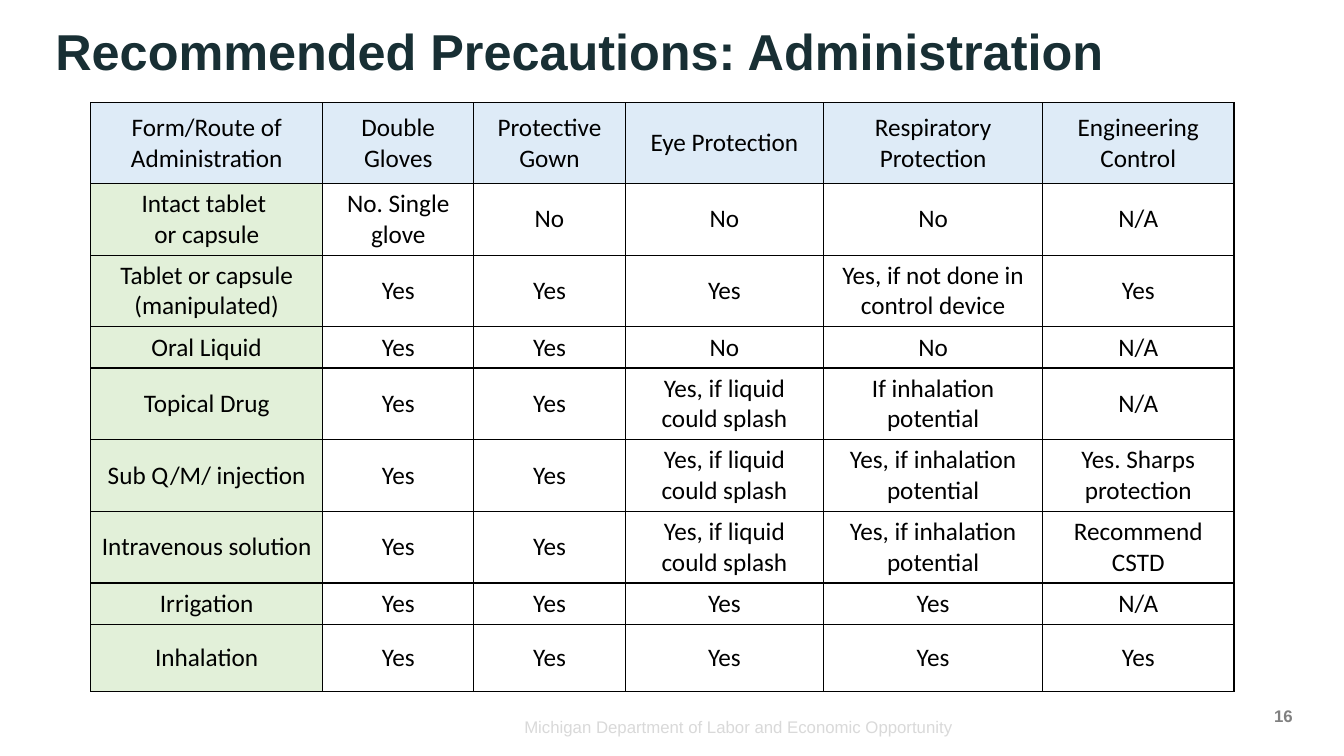
from lxml.etree import SubElement
from pptx import Presentation
from pptx.dml.color import RGBColor
from pptx.enum.text import MSO_ANCHOR, PP_ALIGN
from pptx.oxml.ns import qn
from pptx.util import Inches, Pt

BLACK = RGBColor(0x00, 0x00, 0x00)
TEAL = RGBColor(0x18, 0x2F, 0x34)
BLUE = RGBColor(0xDE, 0xEB, 0xF7)
GREEN = RGBColor(0xE2, 0xF0, 0xD9)
SILVER = RGBColor(0xD9, 0xD9, 0xD9)
GRAY = RGBColor(0x80, 0x80, 0x80)

UNIT = Inches(0.1)  # side of one grid square
WIDTHS = [23, 15, 15, 19.7, 21.7, 19]
HEIGHTS = [8, 7, 7, 4.1, 7, 7, 7, 4.1, 6.7]

SPLASH = "Yes, if liquid could splash"
INHALE = "Yes, if inhalation potential"
ROWS = [
    ["Form/Route of Administration", "Double Gloves", "Protective Gown",
     "Eye Protection", "Respiratory Protection", "Engineering Control"],
    ["Intact tablet \vor capsule", "No. Single glove", "No", "No", "No", "N/A"],
    ["Tablet or capsule (manipulated)", "Yes", "Yes", "Yes",
     "Yes, if not done in control device", "Yes"],
    ["Oral Liquid", "Yes", "Yes", "No", "No", "N/A"],
    ["Topical Drug", "Yes", "Yes", SPLASH, "If inhalation potential", "N/A"],
    ["Sub Q/M/ injection", "Yes", "Yes", SPLASH, INHALE, "Yes. Sharps protection"],
    ["Intravenous solution", "Yes", "Yes", SPLASH, INHALE, "Recommend CSTD"],
    ["Irrigation", "Yes", "Yes", "Yes", "Yes", "N/A"],
    ["Inhalation", "Yes", "Yes", "Yes", "Yes", "Yes"],
]


def grid(count):
    """Turn a count of grid squares into a length."""
    return int(count * UNIT)


class Page:
    head_font = "Arial"
    body_font = "Calibri"

    def __init__(self, deck):
        self.slide = deck.slides.add_slide(deck.slide_layouts[6])

    def style(self, para, font, size, color, align, bold=False):
        para.alignment = align
        para.font.name = font
        para.font.size = Pt(size)
        para.font.color.rgb = color
        para.font.bold = bold

    def text(self, words, box, size, color, align=PP_ALIGN.RIGHT,
             bold=False, anchor=MSO_ANCHOR.MIDDLE, pitch=None):
        frame = self.slide.shapes.add_textbox(*map(grid, box)).text_frame
        frame.word_wrap = True
        frame.vertical_anchor = anchor
        frame.text = words
        para = frame.paragraphs[0]
        para.line_spacing = pitch
        self.style(para, self.head_font, size, color, align, bold)

    def table(self, rows, left, top, widths, heights):
        box = map(grid, (left, top, sum(widths), sum(heights)))
        table = self.slide.shapes.add_table(len(rows), len(widths), *box).table
        table.first_row = table.horz_banding = False
        for column, width in zip(table.columns, widths):
            column.width = grid(width)
        for row, height in zip(table.rows, heights):
            row.height = grid(height)
        for r, row in enumerate(rows):
            for c, words in enumerate(row):
                fill = BLUE if r == 0 else GREEN if c == 0 else None
                self.cell(table.cell(r, c), words, fill)

    def cell(self, cell, words, fill):
        cell.text = words
        cell.vertical_anchor = MSO_ANCHOR.MIDDLE
        self.style(cell.text_frame.paragraphs[0], self.body_font, 18,
                   BLACK, PP_ALIGN.CENTER)
        self.border(cell)
        if fill is None:
            cell.fill.background()
        else:
            cell.fill.solid()
            cell.fill.fore_color.rgb = fill

    def border(self, cell):
        props = cell._tc.get_or_add_tcPr()
        for side in ("a:lnL", "a:lnR", "a:lnT", "a:lnB"):
            line = SubElement(props, qn(side), w=str(Pt(1)))
            paint = SubElement(line, qn("a:solidFill"))
            SubElement(paint, qn("a:srgbClr"), val=str(BLACK))


def main():
    deck = Presentation()
    deck.slide_width, deck.slide_height = Inches(13.33), Inches(7.5)
    page = Page(deck)
    page.table(ROWS, 9, 10.2, WIDTHS, HEIGHTS)
    page.text("Recommended Precautions: Administration", (4.5, 1, 108.9, 8.7),
              36, TEAL, PP_ALIGN.LEFT, bold=True, pitch=0.9)
    page.text("Michigan Department of Labor and Economic Opportunity",
              (42.7, 70.6, 52.8, 3), 12, SILVER, anchor=MSO_ANCHOR.TOP)
    page.text("16", (99.2, 69, 30, 4), 12, GRAY, bold=True)
    deck.save("out.pptx")


if __name__ == "__main__":
    main()
